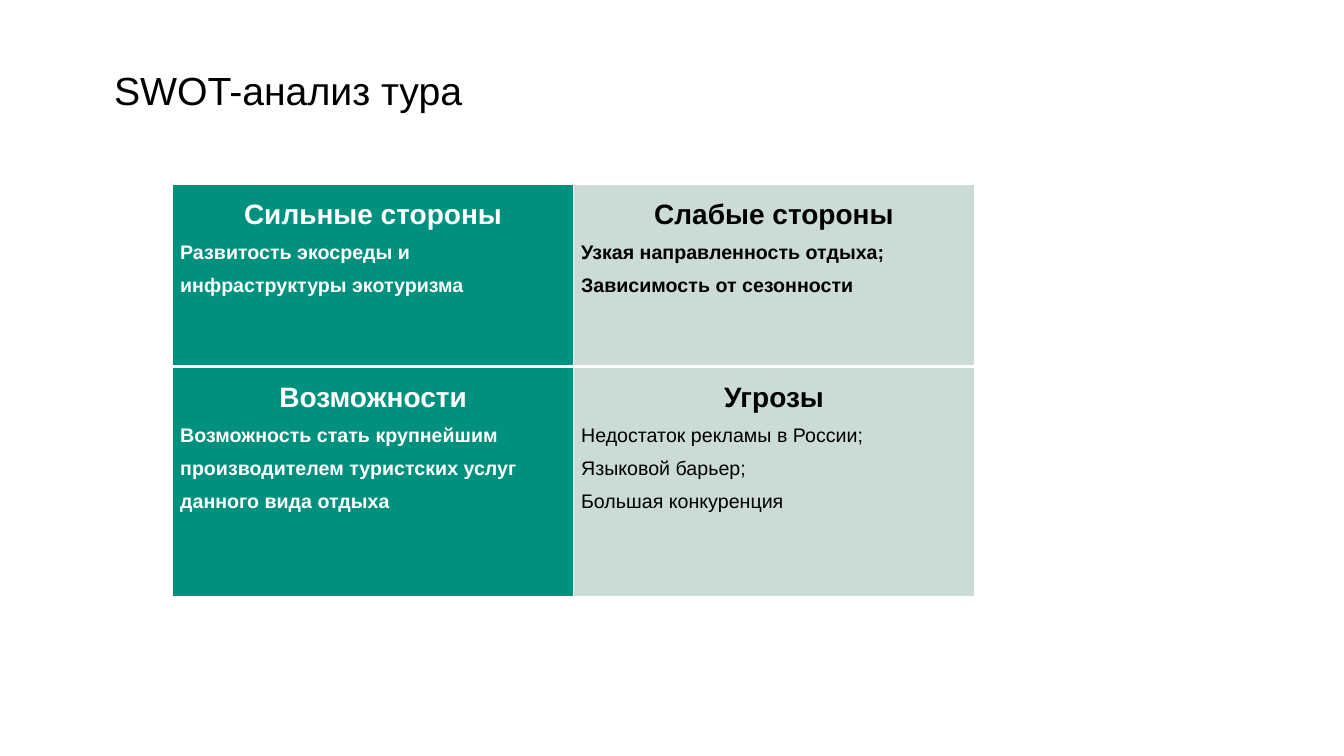
from lxml import etree
from pptx import Presentation
from pptx import util as u
from pptx.dml.color import RGBColor
from pptx.enum import text
from pptx.oxml import ns

WHITE = RGBColor(0xFF, 0xFF, 0xFF)
BLACK = RGBColor(0, 0, 0)
GREEN = RGBColor(0x00, 0x90, 0x7E)
PALE = RGBColor(0xCB, 0xDB, 0xD8)
FONT = "Arial"
COLUMN_COLORS = [(GREEN, WHITE), (PALE, BLACK)]
ROW_HEIGHTS = [130.3, 164.2]
LEFT, CENTER, JUSTIFY = text.PP_ALIGN.LEFT, text.PP_ALIGN.CENTER, text.PP_ALIGN.JUSTIFY

SWOT = [
    [
        ("Сильные стороны", ["Развитость экосреды и инфраструктуры экотуризма"], True, LEFT),
        ("Слабые стороны", ["Узкая направленность отдыха;", "Зависимость от сезонности"], True, LEFT),
    ],
    [
        ("Возможности",
         ["Возможность стать крупнейшим производителем туристских услуг данного вида отдыха"],
         True, LEFT),
        ("Угрозы",
         ["Недостаток рекламы в России;", "Языковой барьер;", "Большая конкуренция"],
         False, JUSTIFY),
    ],
]


def style(paragraph, size, color, bold=False):
    paragraph.font.name = FONT
    paragraph.font.size = u.Pt(size)
    paragraph.font.bold = bold
    paragraph.font.color.rgb = color


def add_title(slide, left, top, width, height):
    title = slide.shapes.add_textbox(u.Pt(left), u.Pt(top), u.Pt(width), u.Pt(height))
    title.text_frame.word_wrap = False
    title.text_frame.auto_size = text.MSO_AUTO_SIZE.SHAPE_TO_FIT_TEXT
    heading = title.text_frame.paragraphs[0]
    heading.text = "SWOT-анализ тура"
    style(heading, 28, BLACK)


def add_borders(cell, widths):
    properties = cell._tc.get_or_add_tcPr()
    for side, width in widths.items():
        line = etree.SubElement(properties, ns.qn(f"a:ln{side}"), w=str(u.Pt(width)))
        fill = etree.SubElement(line, ns.qn("a:solidFill"))
        etree.SubElement(fill, ns.qn("a:srgbClr"), val=str(WHITE))


def fill_quadrant(cell, quadrant, background, ink):
    heading, points, bold, alignment = quadrant
    cell.fill.solid()
    cell.fill.fore_color.rgb = background
    cell.margin_left = cell.margin_right = u.Pt(5.4)
    cell.margin_top = cell.margin_bottom = 0
    cell.text = "\n".join([heading] + points)
    for index, paragraph in enumerate(cell.text_frame.paragraphs):
        paragraph.line_spacing = 1.5
        paragraph.alignment = alignment if index else CENTER
        style(paragraph, 14 if index else 20, ink, bold if index else True)


def add_swot(slide, left, top, width):
    swot = slide.shapes.add_table(
        len(SWOT), len(COLUMN_COLORS),
        u.Pt(left), u.Pt(top), u.Pt(width), u.Pt(sum(ROW_HEIGHTS))).table
    for row, (height, quadrants) in enumerate(zip(ROW_HEIGHTS, SWOT)):
        swot.rows[row].height = u.Pt(height)
        widths = {"L": 1, "R": 1, "T": 3 if row else 1, "B": 1 if row else 3}
        for column, quadrant in enumerate(quadrants):
            cell = swot.cell(row, column)
            add_borders(cell, widths)
            fill_quadrant(cell, quadrant, *COLUMN_COLORS[column])


def main():
    deck = Presentation()
    deck.slide_width, deck.slide_height = u.Pt(960), u.Pt(540)
    slide = deck.slides.add_slide(deck.slide_layouts[6])
    add_swot(slide, 123.3, 131.4, 572.8)
    add_title(slide, 74.4, 44.1, 266.4, 41.2)
    deck.save("out.pptx")


if __name__ == "__main__":
    main()
